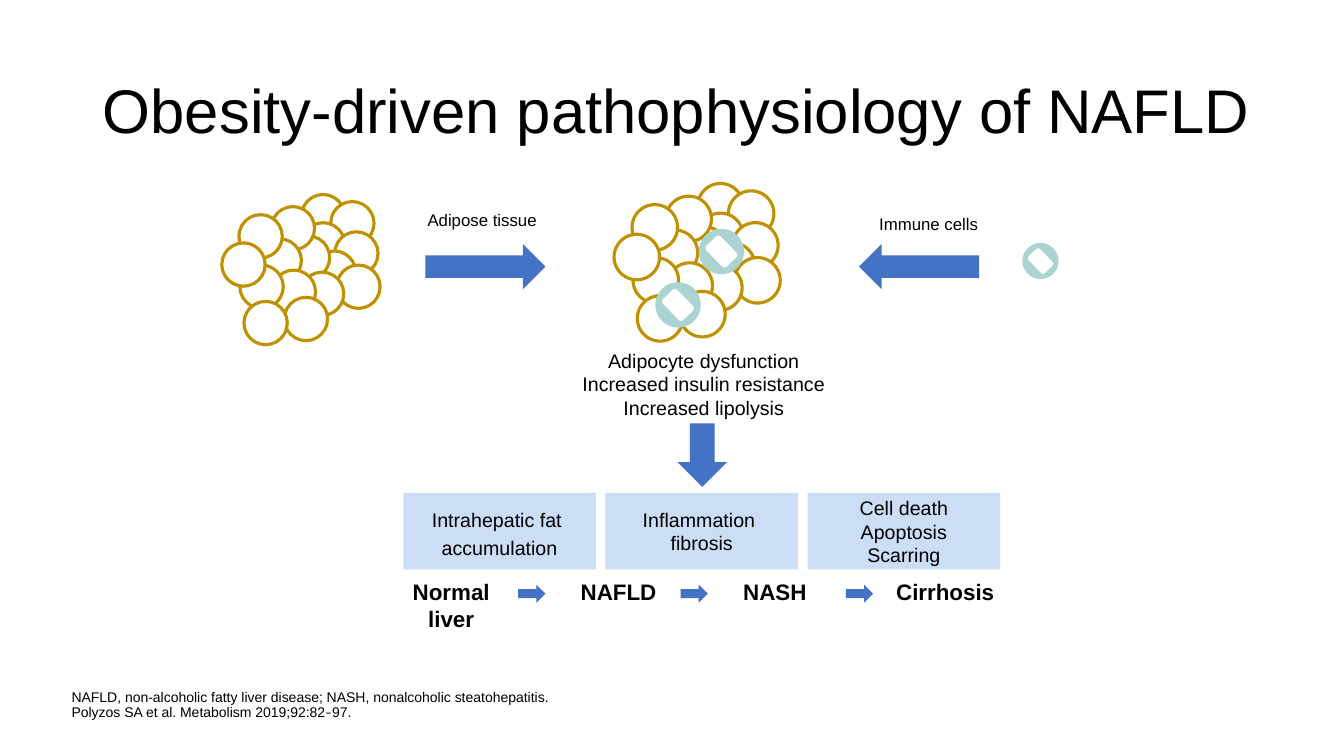
import dataclasses

import pptx
import pptx.dml.color
import pptx.enum.shapes
import pptx.enum.text
import pptx.oxml.ns
import pptx.util
from lxml import etree
from pptx.util import Inches

PRESET = pptx.enum.shapes.MSO_SHAPE
ALIGN = pptx.enum.text.PP_ALIGN
ANCHOR = pptx.enum.text.MSO_ANCHOR
AUTO_SIZE = pptx.enum.text.MSO_AUTO_SIZE
qn = pptx.oxml.ns.qn


@dataclasses.dataclass(frozen=True)
class Theme:
    font: str = "Arial"
    dash_font: str = "Calibri"
    text: str = "000000"
    white: str = "FFFFFF"
    panel: str = "CCDEF6"
    arrow: str = "4472C4"
    fat_outline: str = "BF9000"
    immune: str = "AAD3D1"
    title_size: int = 44
    stage_size: int = 16
    body_size: int = 14
    label_size: int = 12
    footnote_size: int = 10


theme = Theme()


def add_figure(shapes, preset, box, fill, rotation=0, outline=None):
    figure = shapes.add_shape(preset, *map(Inches, box))
    figure.shadow.inherit = False
    figure.rotation = rotation
    figure.fill.solid()
    figure.fill.fore_color.rgb = pptx.dml.color.RGBColor.from_string(fill)
    if outline:
        figure.line.color.rgb = pptx.dml.color.RGBColor.from_string(outline)
        figure.line.width = pptx.util.Pt(2.25)
    else:
        figure.line.fill.background()
    return figure


def write(frame, text, size, align=ALIGN.CENTER, spacing=1.0, bold=False, margins=(0, 0)):
    """Fill a frame; a newline starts a paragraph, a vertical tab breaks a line."""
    frame.text = text
    frame.margin_left = frame.margin_right = Inches(margins[0])
    frame.margin_top = frame.margin_bottom = Inches(margins[1])
    for paragraph in frame.paragraphs:
        paragraph.alignment = align
        paragraph.line_spacing = spacing
        for run in paragraph.runs:
            run.font.name = theme.font
            run.font.size = pptx.util.Pt(size)
            run.font.bold = bold
            run.font.color.rgb = pptx.dml.color.RGBColor.from_string(theme.text)
        for line_break in paragraph._p.findall(qn("a:br")):
            etree.SubElement(line_break, qn("a:rPr")).set("sz", str(size * 100))


presentation = pptx.Presentation()
presentation.slide_width = Inches(13.33)
presentation.slide_height = Inches(7.5)
slide = presentation.slides.add_slide(presentation.slide_layouts[1])

# Title and footnote
title = slide.shapes.title
title.left, title.top, title.width, title.height = map(Inches, (0.92, 0.4, 11.65, 1.45))
write(title.text_frame, "Obesity-driven pathophysiology of NAFLD", theme.title_size,
      ALIGN.LEFT, 0.9, margins=(0.1, 0.05))
title.text_frame.vertical_anchor = ANCHOR.MIDDLE
title.text_frame.auto_size = AUTO_SIZE.NONE

footnote = slide.placeholders[1]
footnote.left, footnote.top, footnote.width, footnote.height = map(
    Inches, (0.71, 6.8, 9.46, 0.35))
write(footnote.text_frame,
      "NAFLD, non-alcoholic fatty liver disease; NASH, nonalcoholic steatohepatitis.\v"
      "Polyzos SA et al. Metabolism 2019;92:82", theme.footnote_size, ALIGN.LEFT, 0.9)
footnote.text_frame.vertical_anchor = ANCHOR.BOTTOM
footnote.text_frame.auto_size = AUTO_SIZE.NONE
citation = footnote.text_frame.paragraphs[0]
citation.space_before = pptx.util.Pt(10)
for ending, font in (("–", theme.dash_font), ("97.", theme.font)):
    page_run = citation.add_run()
    page_run.text = ending
    page_run.font.name = font
    page_run.font.size = pptx.util.Pt(theme.footnote_size)
    page_run.font.color.rgb = pptx.dml.color.RGBColor.from_string(theme.text)
citation_properties = citation._p.get_or_add_pPr()
citation_properties.set("marL", "0")
citation_properties.set("indent", "0")
etree.SubElement(citation_properties, qn("a:buNone"))

# Liver changes
liver_changes = (
    ("Intrahepatic fat \vaccumulation", 1.2),
    ("Inflammation \nfibrosis", 1.0),
    ("Cell death\nApoptosis\nScarring", 1.0),
)
for column, (change, spacing) in enumerate(liver_changes):
    panel = add_figure(slide.shapes, PRESET.RECTANGLE,
                       (4 + 2.005 * column, 4.89, 1.91, 0.76), theme.panel)
    write(panel.text_frame, change, theme.body_size, spacing=spacing, margins=(0.08, 0.04))
    panel.text_frame.vertical_anchor = ANCHOR.MIDDLE

# Fat cells, as offsets from the cluster's corner, back to front
fat_cells = (
    (0.79, 0), (1.08, 0.07), (0.79, 0.28), (1.12, 0.37),
    (0.9, 0.56), (0.64, 0.41), (1.14, 0.7), (0.78, 0.77),
    (0.49, 0.12), (0.36, 0.44), (0.17, 0.2), (0.5, 0.75),
    (0.62, 1.02), (0.18, 0.7), (0, 0.48), (0.22, 1.06),
)
healthy_tissue = slide.shapes.add_group_shape()
inflamed_tissue = slide.shapes.add_group_shape()
for tissue, left, top, scale in ((healthy_tissue, 2.2, 1.93, 1),
                                 (inflamed_tissue, 6.09, 1.82, 1.05)):
    diameter = 0.43 * scale
    for x, y in fat_cells:
        add_figure(tissue.shapes, PRESET.OVAL,
                   (left + scale * x, top + scale * y, diameter, diameter),
                   theme.white, outline=theme.fat_outline)

# Immune cells, two of them inside the inflamed tissue
lone_cell = slide.shapes.add_group_shape()
for host, left, top, diameter in ((inflamed_tissue, 6.5, 2.8, 0.45),
                                  (inflamed_tissue, 6.93, 2.27, 0.45),
                                  (lone_cell, 10.14, 2.41, 0.36)):
    add_figure(host.shapes, PRESET.OVAL, (left, top, diameter, diameter), theme.immune)
    width, height = 0.64 * diameter, 0.44 * diameter
    add_figure(host.shapes, PRESET.ROUNDED_RECTANGLE,
               (left + (diameter - width) / 2, top + (diameter - height) / 2, width, height),
               theme.white, rotation=46)

# Arrows
arrows = [
    ((4.22, 2.42, 1.19, 0.45), 0),
    ((8.52, 2.42, 1.19, 0.45), 180),
    ((6.65, 4.27, 0.63, 0.49), 90),
]
arrows += [((left, 5.8, 0.27, 0.18), 0) for left in (5.14, 6.75, 8.39)]
for box, rotation in arrows:
    add_figure(slide.shapes, PRESET.RIGHT_ARROW, box, theme.arrow, rotation)

# Labels and disease stages
captions = [
    ("Adipose tissue", (4.24, 2.04, 1.09, 0.22), theme.label_size, ALIGN.LEFT, 1.2),
    ("Immune cells", (8.72, 2.08, 0.99, 0.22), theme.label_size, ALIGN.LEFT, 1.2),
    ("Adipocyte dysfunction\nIncreased insulin resistance\nIncreased lipolysis",
     (5.19, 3.46, 3.58, 0.71), theme.body_size, ALIGN.CENTER, 1.0),
]
captions += [
    (stage, (left, 5.74, 1.27, height), theme.stage_size, ALIGN.CENTER, 1.0)
    for stage, left, height in (("Normal liver", 3.84, 0.54), ("NAFLD", 5.5, 0.27),
                                ("NASH", 7.05, 0.27), ("Cirrhosis", 8.74, 0.27))
]
for wording, box, size, align, spacing in captions:
    caption = slide.shapes.add_textbox(*map(Inches, box))
    write(caption.text_frame, wording, size, align, spacing, bold=size == theme.stage_size)
    caption.text_frame.word_wrap = size != theme.label_size
    caption.text_frame.auto_size = AUTO_SIZE.SHAPE_TO_FIT_TEXT

presentation.save("out.pptx")
